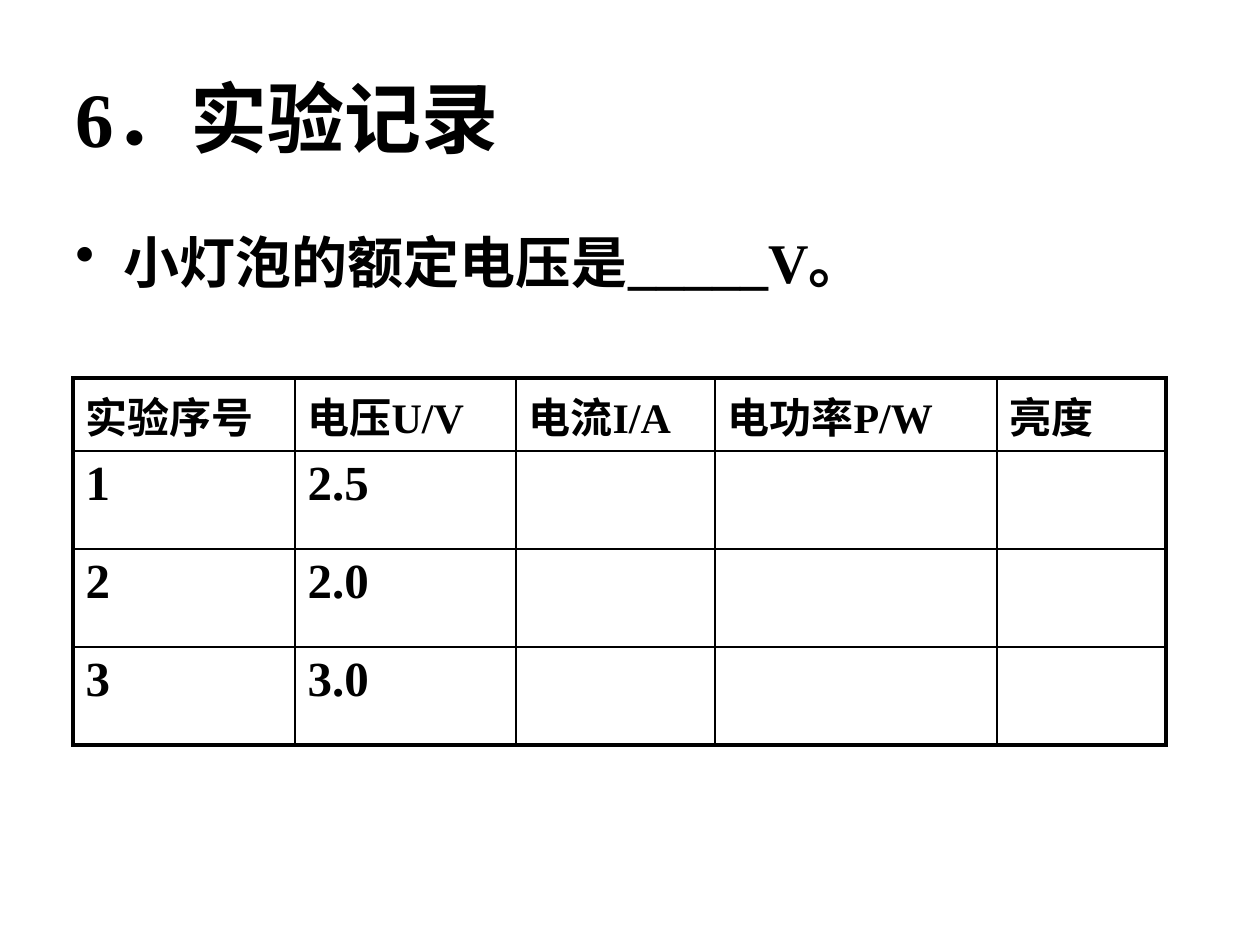
from dataclasses import dataclass

import pptx
import pptx.dml.color
import pptx.enum.lang
import pptx.enum.text
import pptx.oxml
import pptx.oxml.ns
import pptx.util

PX = 914400 // 126
BLACK = pptx.dml.color.RGBColor(0, 0, 0)
WHITE = pptx.dml.color.RGBColor(255, 255, 255)
HANGING = 48
THIN, THICK = 1, 2.25

FONT = {
    "name": "Times New Roman",
    "bold": True,
    "language_id": pptx.enum.lang.MSO_LANGUAGE_ID.SIMPLIFIED_CHINESE,
}


@dataclass
class TextBlock:
    text: str
    left: int
    top: int
    width: int
    height: int
    size: int
    anchor: pptx.enum.text.MSO_ANCHOR
    bullet: bool = False


TEXTS = [
    TextBlock("6．实验记录", 63, 38, 1134, 158, 44, pptx.enum.text.MSO_ANCHOR.MIDDLE),
    TextBlock("小灯泡的额定电压是_____V。", 63, 221, 1081, 168, 32,
              pptx.enum.text.MSO_ANCHOR.TOP, bullet=True),
]

TABLE_LEFT, TABLE_TOP = 73, 378
COLUMNS = [222, 221, 199, 282, 169]
ROWS = [73, 98, 98, 98]
RECORDS = [
    ["实验序号", "电压U/V", "电流I/A", "电功率P/W", "亮度"],
    ["1", "2.5", "", "", ""],
    ["2", "2.0", "", "", ""],
    ["3", "3.0", "", "", ""],
]
HEADER_SIZE, BODY_SIZE = 24, 28


def px(n: int) -> int:
    return pptx.util.Emu(n * PX)


def write(p, text: str, size: int) -> None:
    r = p.add_run()
    r.text = text
    for name, value in FONT.items():
        setattr(r.font, name, value)
    r.font.size = pptx.util.Pt(size)
    r.font.color.rgb = BLACK


def hang(p) -> None:
    pPr = p._p.get_or_add_pPr()
    pPr.set("marL", str(px(HANGING)))
    pPr.set("indent", str(-px(HANGING)))


def add_text(s, block: TextBlock) -> None:
    sp = s.shapes.add_textbox(px(block.left), px(block.top), px(block.width), px(block.height))
    tf = sp.text_frame
    tf.word_wrap = True
    tf.vertical_anchor = block.anchor
    p = tf.paragraphs[0]
    if block.bullet:
        hang(p)
        p.space_before = pptx.util.Pt(6.4)
        p._p.get_or_add_pPr().append(pptx.oxml.parse_xml(
            f'<a:buChar {pptx.oxml.ns.nsdecls("a")} char="•"/>'))
    write(p, block.text, block.size)


def set_borders(cell, widths: dict[str, float]) -> None:
    tcPr = cell._tc.get_or_add_tcPr()
    for i, (side, width) in enumerate(widths.items()):
        tcPr.insert(i, pptx.oxml.parse_xml(
            f'<a:{side} {pptx.oxml.ns.nsdecls("a")} w="{pptx.util.Pt(width)}">'
            f'<a:solidFill><a:srgbClr val="{BLACK}"/></a:solidFill></a:{side}>'))


def add_records(s) -> None:
    table = s.shapes.add_table(len(ROWS), len(COLUMNS), px(TABLE_LEFT), px(TABLE_TOP),
                               px(sum(COLUMNS)), px(sum(ROWS))).table
    table.first_row = table.horz_banding = False
    for column, width in zip(table.columns, COLUMNS):
        column.width = px(width)
    for row, height in zip(table.rows, ROWS):
        row.height = px(height)

    last_row, last_col = len(ROWS) - 1, len(COLUMNS) - 1
    for i, record in enumerate(RECORDS):
        for j, text in enumerate(record):
            cell = table.cell(i, j)
            cell.fill.background()
            # Thick outer frame, thin inner grid
            edges = {"lnL": j == 0, "lnR": j == last_col, "lnT": i == 0, "lnB": i == last_row}
            set_borders(cell, {side: THICK if outer else THIN for side, outer in edges.items()})
            if text:
                p = cell.text_frame.paragraphs[0]
                hang(p)
                write(p, text, BODY_SIZE if i else HEADER_SIZE)


def main() -> None:
    prs = pptx.Presentation()
    prs.slide_width, prs.slide_height = px(1260), px(945)
    s = prs.slides.add_slide(prs.slide_layouts[6])
    s.background.fill.solid()
    s.background.fill.fore_color.rgb = WHITE

    # Title and rated-voltage line
    for block in TEXTS:
        add_text(s, block)

    # Experiment record table
    add_records(s)
    prs.save("out.pptx")


if __name__ == "__main__":
    main()
